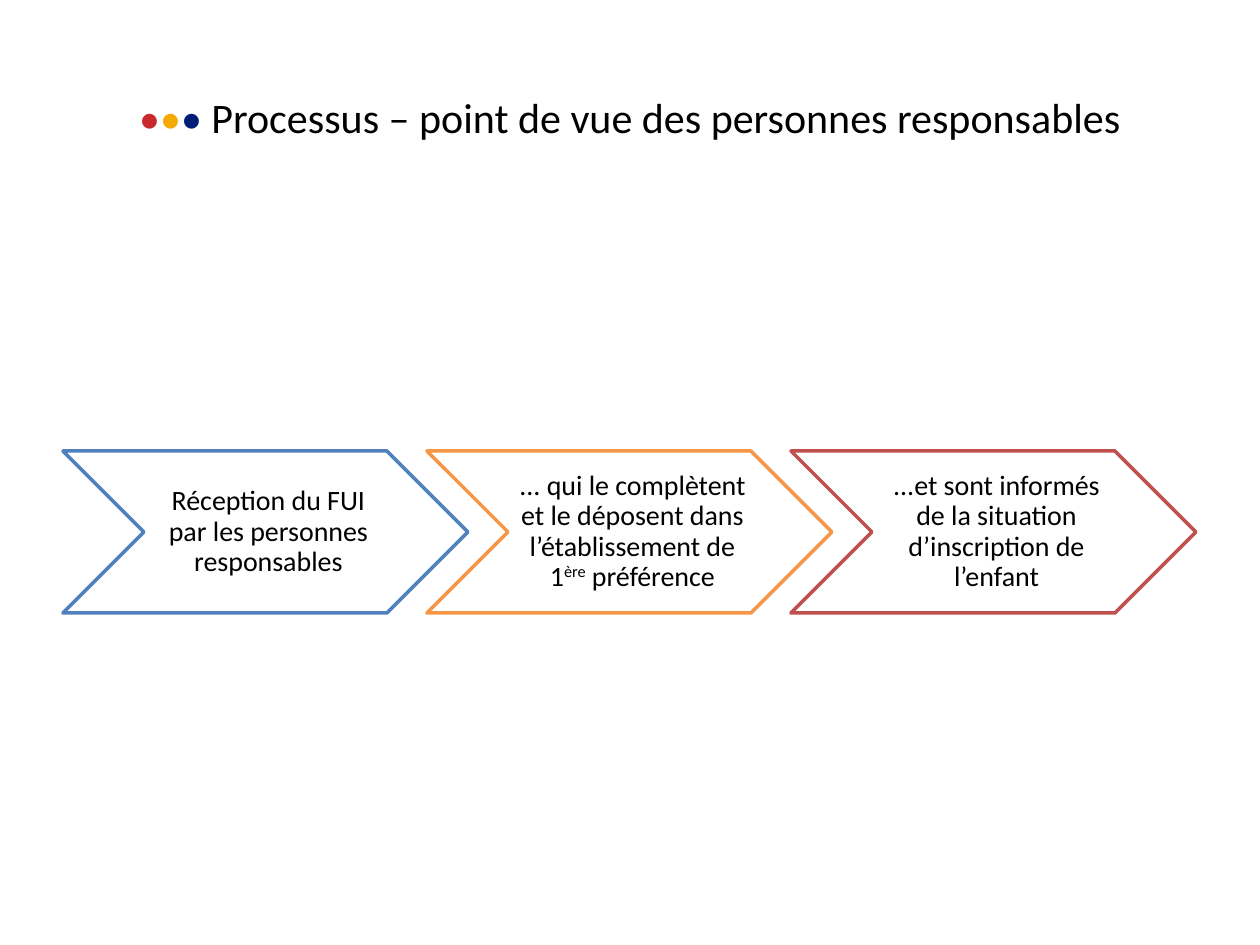
import pptx
import pptx.dml.color
import pptx.enum.shapes
import pptx.enum.text
import pptx.util

RGBColor = pptx.dml.color.RGBColor
BLACK = RGBColor(0x00, 0x00, 0x00)
WHITE = RGBColor(0xFF, 0xFF, 0xFF)
DOT_RED = RGBColor(0xC9, 0x28, 0x2D)
DOT_YELLOW = RGBColor(0xF4, 0xAA, 0x00)
DOT_NAVY = RGBColor(0x00, 0x1D, 0x77)
STEP_BLUE = RGBColor(0x4F, 0x81, 0xBD)
STEP_ORANGE = RGBColor(0xF7, 0x96, 0x46)
STEP_RED = RGBColor(0xC0, 0x50, 0x4D)

PX_PER_INCH = 126
SLIDE_WIDTH, SLIDE_HEIGHT = 1260, 945
TITLE_ONLY = 5


def px(length):
    return pptx.util.Emu(round(length * pptx.util.Inches(1) / PX_PER_INCH))


class ProcessSlide:
    font_name = "Calibri"
    title_size = pptx.util.Pt(24)
    step_size = pptx.util.Pt(16)
    outline_width = pptx.util.Pt(2)

    def __init__(self, presentation):
        layout = presentation.slide_layouts[TITLE_ONLY]
        self.slide = presentation.slides.add_slide(layout)

    def centred_text(self, frame, runs, size):
        """Fill the frame with one centred paragraph of (text, colour, baseline) runs."""
        frame.word_wrap = True
        frame.vertical_anchor = pptx.enum.text.MSO_ANCHOR.MIDDLE
        paragraph = frame.paragraphs[0]
        paragraph.alignment = pptx.enum.text.PP_ALIGN.CENTER
        for text, colour, baseline in runs:
            run = paragraph.add_run()
            run.text = text
            run.font.name = self.font_name
            run.font.size = size
            run.font.color.rgb = colour
            if baseline:
                run.font._element.set("baseline", str(baseline * 1000))
        return paragraph

    def title(self, left, top, width, height, runs):
        title = self.slide.shapes.title
        title.left, title.top = px(left), px(top)
        title.width, title.height = px(width), px(height)
        self.centred_text(title.text_frame, runs, self.title_size)

    def step(self, left, top, width, height, outline, runs):
        chevron = self.slide.shapes.add_shape(
            pptx.enum.shapes.MSO_SHAPE.CHEVRON,
            px(left), px(top), px(width), px(height))
        chevron.shadow.inherit = False
        chevron.fill.solid()
        chevron.fill.fore_color.rgb = WHITE
        chevron.line.color.rgb = outline
        chevron.line.width = self.outline_width
        frame = chevron.text_frame
        frame.margin_left = px(9)
        frame.margin_top = frame.margin_right = frame.margin_bottom = px(3)
        self.centred_text(frame, runs, self.step_size).line_spacing = 0.9


def main():
    presentation = pptx.Presentation()
    presentation.slide_width = px(SLIDE_WIDTH)
    presentation.slide_height = px(SLIDE_HEIGHT)
    process = ProcessSlide(presentation)

    process.title(63, 38, 1134, 157, [
        ("•", DOT_RED, 0),
        ("•", DOT_YELLOW, 0),
        ("• ", DOT_NAVY, 0),
        ("Processus – point de vue des personnes responsables", BLACK, 0),
    ])

    steps = [
        (STEP_BLUE, [("Réception du FUI par les personnes responsables", BLACK, 0)]),
        (STEP_ORANGE, [
            ("... qui le complètent et le déposent dans l’établissement de 1", BLACK, 0),
            ("ère", BLACK, 30),
            (" préférence", BLACK, 0),
        ]),
        (STEP_RED, [
            ("...et sont informés de la situation d’inscription de l’enfant", BLACK, 0),
        ]),
    ]
    first_left, step_pitch = 63, 364
    for index, (outline, runs) in enumerate(steps):
        process.step(first_left + index * step_pitch, 451, 405, 162, outline, runs)

    presentation.save("out.pptx")


if __name__ == "__main__":
    main()
